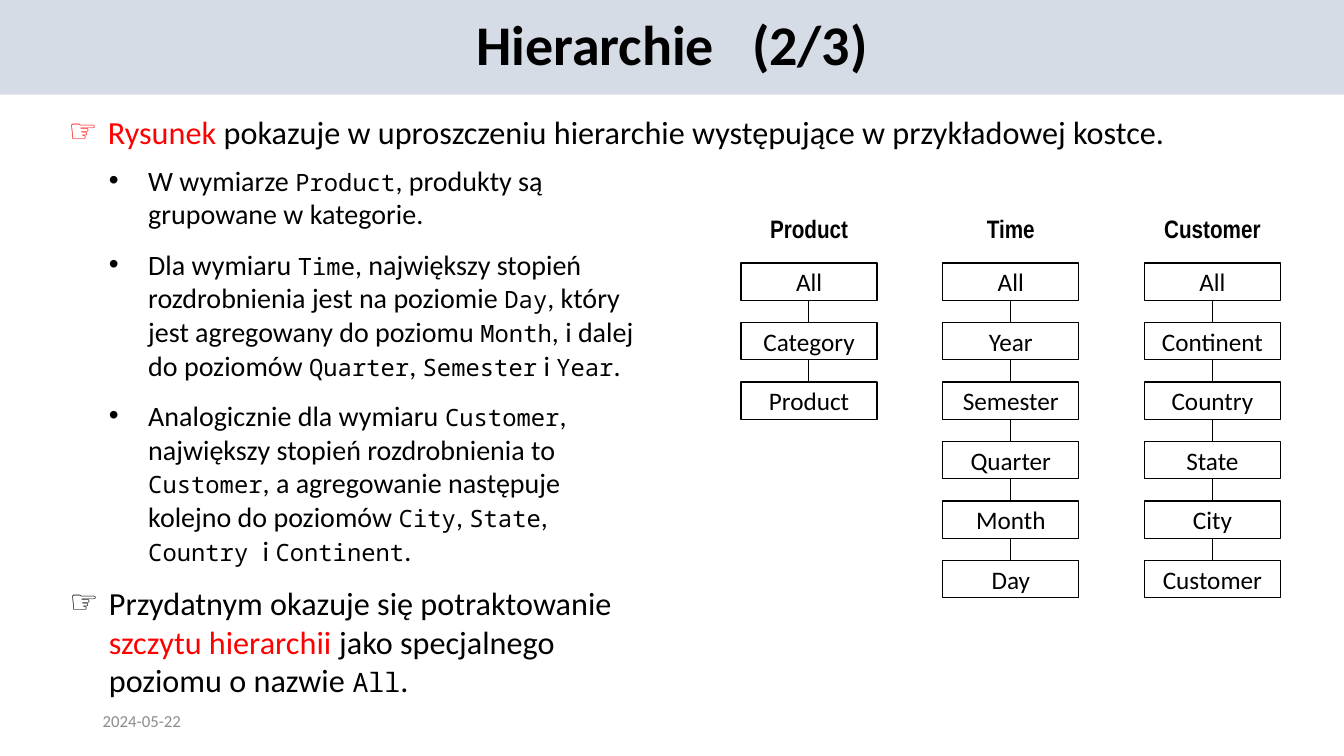
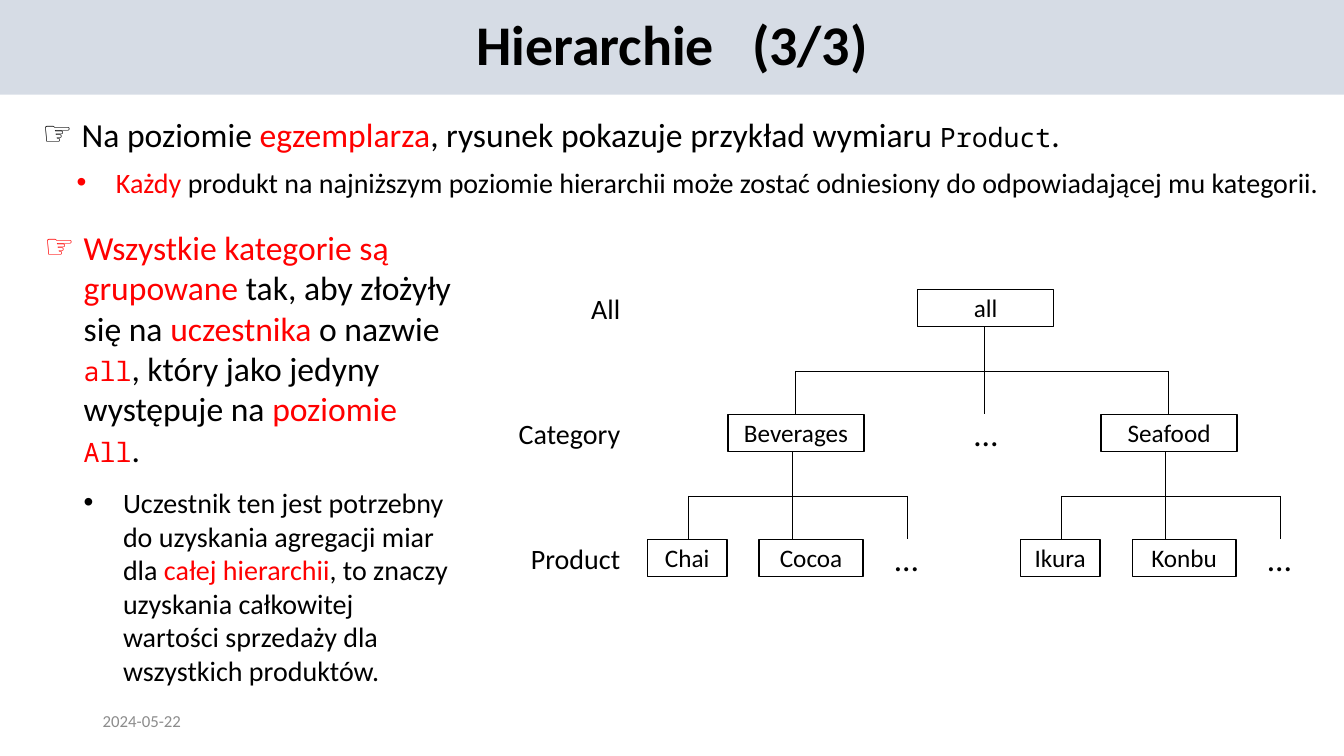
from dataclasses import dataclass
from itertools import pairwise

import pptx
import pptx.dml.color
import pptx.enum.shapes
import pptx.enum.text
import pptx.oxml
import pptx.oxml.ns
import pptx.util
from pptx.util import Inches

ALIGN = pptx.enum.text.PP_ALIGN
MIDDLE = pptx.enum.text.MSO_ANCHOR.MIDDLE


@dataclass(frozen=True)
class Theme:
    ink: str = "000000"
    accent: str = "FF0000"
    band: str = "D6DCE5"
    muted: str = "8C8C8C"
    font: str = "Calibri"
    code_font: str = "Noto Sans Mono"
    heading_font: str = "Arial Narrow"
    title_size: int = 40
    lead_size: int = 24
    compact_lead_size: int = 23
    detail_size: int = 20
    node_size: int = 18
    date_size: int = 12
    line_width: float = 0.5
    border_width: float = 1
    bullets: tuple = ("☞", "•")
    indent: float = 0.39

    def code_size(self, size):
        """Code is set smaller than the text around it."""
        return 17 if size == self.detail_size else 19


THEME = Theme()
SLIDE_WIDTH, SLIDE_HEIGHT = 13.33, 7.5
BAND_HEIGHT = 0.94
NODE_WIDTH, NODE_HEIGHT = 1.35, 0.37
DATE = "2024-05-22"


@dataclass(frozen=True)
class Span:
    text: str
    code: bool = False
    accent: bool = False


@dataclass(frozen=True)
class Item:
    spans: list
    size: int = THEME.detail_size
    level: int = 0
    before: int = 12
    margin: float | None = None


def code(text, accent=False):
    return Span(text, code=True, accent=accent)


def red(text):
    return Span(text, accent=True)


def rgb(value):
    return pptx.dml.color.RGBColor.from_string(value)


def add_run(paragraph, text, *, size, font=THEME.font, color=THEME.ink,
            bold=False, tracking=None):
    """Append formatted text; tracking is extra letter space in points."""
    run = paragraph.add_run()
    run.text = text
    run.font.size = pptx.util.Pt(size)
    run.font.name = font
    run.font.bold = bold
    run.font.color.rgb = rgb(color)
    if tracking:
        run.font._element.set("spc", str(tracking * 100))


def place(target, left, top, width, height):
    target.left, target.top = Inches(left), Inches(top)
    target.width, target.height = Inches(width), Inches(height)


def prepare_layout(deck):
    """Give the two-list layout its title band."""
    layout = deck.slide_layouts.get_by_name("Two Content")
    band = layout.placeholders[0]
    place(band, 0, 0, SLIDE_WIDTH, BAND_HEIGHT)
    band.fill.solid()
    band.fill.fore_color.rgb = rgb(THEME.band)
    return layout


def add_slide(deck, layout, part):
    slide = deck.slides.add_slide(layout)
    frame = slide.shapes.title.text_frame
    frame.auto_size = pptx.enum.text.MSO_AUTO_SIZE.NONE
    frame.vertical_anchor = MIDDLE
    heading = frame.paragraphs[0]
    heading.alignment = ALIGN.CENTER
    heading.line_spacing = 0.9
    for text, tracking in (("Hierarchie", None), (" ", 18), (part, None)):
        add_run(heading, text, size=THEME.title_size, bold=True, tracking=tracking)
    add_label(slide, DATE, 0.92, 6.95, 3, 0.4, align=ALIGN.LEFT,
              size=THEME.date_size, color=THEME.muted)
    return slide


def set_bullet(paragraph, bullet, margin):
    properties = paragraph._p.get_or_add_pPr()
    properties.set("marL", str(Inches(margin)))
    properties.set("indent", str(-Inches(THEME.indent)))
    mark = pptx.oxml.parse_xml(
        f'<a:buChar {pptx.oxml.ns.nsdecls("a")} char="{bullet}"/>')
    properties.append(mark)


def fill_list(placeholder, box, items):
    place(placeholder, *box)
    frame = placeholder.text_frame
    frame.auto_size = pptx.enum.text.MSO_AUTO_SIZE.NONE
    for number, item in enumerate(items):
        paragraph = frame.add_paragraph() if number else frame.paragraphs[0]
        paragraph.level = item.level
        paragraph.space_before = pptx.util.Pt(item.before)
        margin = item.margin or THEME.indent * (item.level + 1)
        set_bullet(paragraph, THEME.bullets[item.level], margin)
        for part in item.spans:
            span = Span(part) if isinstance(part, str) else part
            add_run(paragraph, span.text,
                    size=THEME.code_size(item.size) if span.code else item.size,
                    font=THEME.code_font if span.code else THEME.font,
                    color=THEME.accent if span.accent else THEME.ink)


def write_centred(frame, text, align, **text_format):
    frame.word_wrap = True
    frame.vertical_anchor = MIDDLE
    frame.paragraphs[0].alignment = align
    add_run(frame.paragraphs[0], text, **text_format)


def add_label(slide, text, left, top, width=NODE_WIDTH, height=NODE_HEIGHT,
              align=ALIGN.CENTER, **text_format):
    label = slide.shapes.add_textbox(
        Inches(left), Inches(top), Inches(width), Inches(height))
    write_centred(label.text_frame, text, align, **text_format)


def add_node(slide, text, left, top, width=NODE_WIDTH):
    node = slide.shapes.add_shape(
        pptx.enum.shapes.MSO_SHAPE.RECTANGLE,
        Inches(left), Inches(top), Inches(width), Inches(NODE_HEIGHT))
    node.shadow.inherit = False
    node.fill.background()
    node.line.color.rgb = rgb(THEME.ink)
    node.line.width = pptx.util.Pt(THEME.border_width)
    write_centred(node.text_frame, text, ALIGN.CENTER, size=THEME.node_size)


def add_line(slide, x1, y1, x2, y2):
    line = slide.shapes.add_connector(
        pptx.enum.shapes.MSO_CONNECTOR.STRAIGHT,
        Inches(x1), Inches(y1), Inches(x2), Inches(y2))
    line.line.color.rgb = rgb(THEME.ink)
    line.line.width = pptx.util.Pt(THEME.line_width)
    line._element.spPr.append(
        pptx.oxml.parse_xml(f'<a:effectLst {pptx.oxml.ns.nsdecls("a")}/>'))


def add_level_chain(slide, dimension, levels, left):
    """Draw one dimension as a column of linked levels."""
    add_label(slide, dimension, left, 2.07, height=0.4, size=THEME.node_size,
              font=THEME.heading_font, bold=True)
    tops = [2.61 + 0.59 * row for row in range(len(levels))]
    for level, top in zip(levels, tops):
        add_node(slide, level, left, top)
    axis = left + 0.67
    for upper, lower in pairwise(tops):
        add_line(slide, axis, upper + NODE_HEIGHT, axis, lower)


def add_branch(slide, trunk, first, last, parent_top, child_top):
    """Join a parent to its middle child and to both outer ones."""
    parent_bottom = parent_top + NODE_HEIGHT
    bus = parent_bottom + 0.44
    add_line(slide, trunk, parent_bottom, trunk, child_top)
    add_line(slide, first, bus, last, bus)
    for end in (first, last):
        add_line(slide, end, bus, end, child_top)


def add_ellipsis(slide, left, top):
    add_label(slide, "…", left, top, width=0.52, size=THEME.lead_size)


def add_product_tree(slide):
    tops = [2.87 + 1.24 * row for row in range(3)]
    root_top, category_top, product_top = tops
    for level, top in zip(("All", "Category", "Product"), tops):
        add_label(slide, level, 4.9, top, align=ALIGN.RIGHT, size=THEME.detail_size)

    add_node(slide, "all", 9.1, root_top)
    add_ellipsis(slide, 9.52, category_top)
    categories = {"Beverages": (7.22, "Chai", "Cocoa"),
                  "Seafood": (10.92, "Ikura", "Konbu")}
    first, last = (left + 0.67 for left, *_ in categories.values())
    add_branch(slide, 9.76, first, last, root_top, category_top)

    for category, (left, outer, middle) in categories.items():
        add_node(slide, category, left, category_top)
        add_node(slide, outer, left - 0.8, product_top, width=0.79)
        add_node(slide, middle, left + 0.31, product_top, width=1.03)
        add_ellipsis(slide, left + 1.51, product_top)
        add_branch(slide, left + 0.64, left - 0.39, left + 1.78,
                   category_top, product_top)


def build_levels_slide(deck, layout):
    slide = add_slide(deck, layout, "(2/3)")
    fill_list(slide.placeholders[1], (0.58, 1.06, 12.61, 0.49), [
        Item([red("Rysunek"), " pokazuje w uproszczeniu hierarchie "
              "występujące w przykładowej kostce."],
             size=THEME.compact_lead_size, before=6),
    ])
    fill_list(slide.placeholders[2], (0.59, 1.57, 5.85, 5.47), [
        Item(["W wymiarze ", code("Product"),
              ", produkty są grupowane w kategorie."], level=1),
        Item(["Dla wymiaru ", code("Time"),
              ", największy stopień rozdrobnienia jest na poziomie ", code("Day"),
              ", który jest agregowany do poziomu ", code("Month"),
              ", i dalej do poziomów ", code("Quarter"), ", ", code("Semester"),
              " i ", code("Year"), "."], level=1),
        Item(["Analogicznie dla wymiaru ", code("Customer"),
              ", największy stopień rozdrobnienia to ", code("Customer"),
              ", a agregowanie następuje kolejno do poziomów ", code("City"),
              ", ", code("State"), ", ", code("Country "), "i ",
              code("Continent"), "."], level=1),
        Item(["Przydatnym okazuje się potraktowanie ", red("szczytu hierarchii "),
              "jako specjalnego poziomu o nazwie ", code("All"), "."],
             size=THEME.compact_lead_size),
    ])
    dimensions = {
        "Product": ("All", "Category", "Product"),
        "Time": ("All", "Year", "Semester", "Quarter", "Month", "Day"),
        "Customer": ("All", "Continent", "Country", "State", "City", "Customer"),
    }
    for column, (dimension, levels) in enumerate(dimensions.items()):
        add_level_chain(slide, dimension, levels, 7.35 + 2 * column)


def build_members_slide(deck, layout):
    slide = add_slide(deck, layout, "(3/3)")
    fill_list(slide.placeholders[1], (0.32, 1.08, 12.93, 0.96), [
        Item(["Na poziomie ", red("egzemplarza"),
              ", rysunek pokazuje przykład wymiaru ", code("Product"), "."],
             size=THEME.lead_size, before=6),
        Item([red("Każdy "), "produkt na najniższym poziomie hierarchii może "
              "zostać odniesiony do odpowiadającej mu kategorii."],
             level=1, before=8, margin=0.73),
    ])
    fill_list(slide.placeholders[2], (0.34, 2.2, 4.26, 4.71), [
        Item([red("Wszystkie kategorie są grupowane "), "tak, aby złożyły się na ",
              red("uczestnika"), " o nazwie ", code("all", accent=True),
              ", który jako jedyny występuje na ", red("poziomie "),
              code("All", accent=True), "."], size=THEME.lead_size, before=6),
        Item(["Uczestnik ten jest potrzebny do uzyskania agregacji miar dla ",
              red("całej hierarchii"), ", to znaczy uzyskania całkowitej wartości "
              "sprzedaży dla wszystkich produktów."], level=1),
    ])
    add_product_tree(slide)


def main():
    deck = pptx.Presentation()
    deck.slide_width, deck.slide_height = Inches(SLIDE_WIDTH), Inches(SLIDE_HEIGHT)
    layout = prepare_layout(deck)
    build_levels_slide(deck, layout)
    build_members_slide(deck, layout)
    deck.save("out.pptx")


if __name__ == "__main__":
    main()
